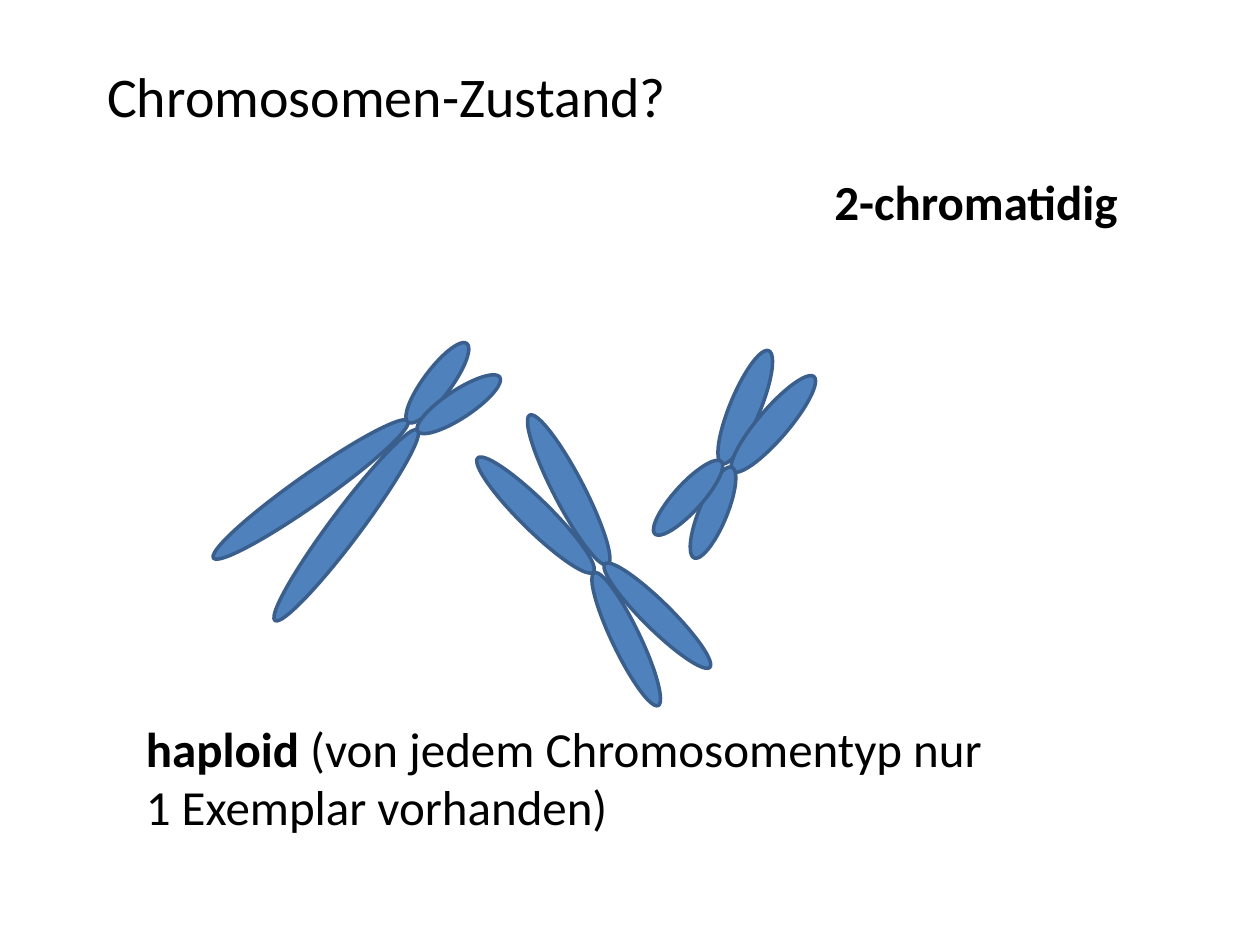
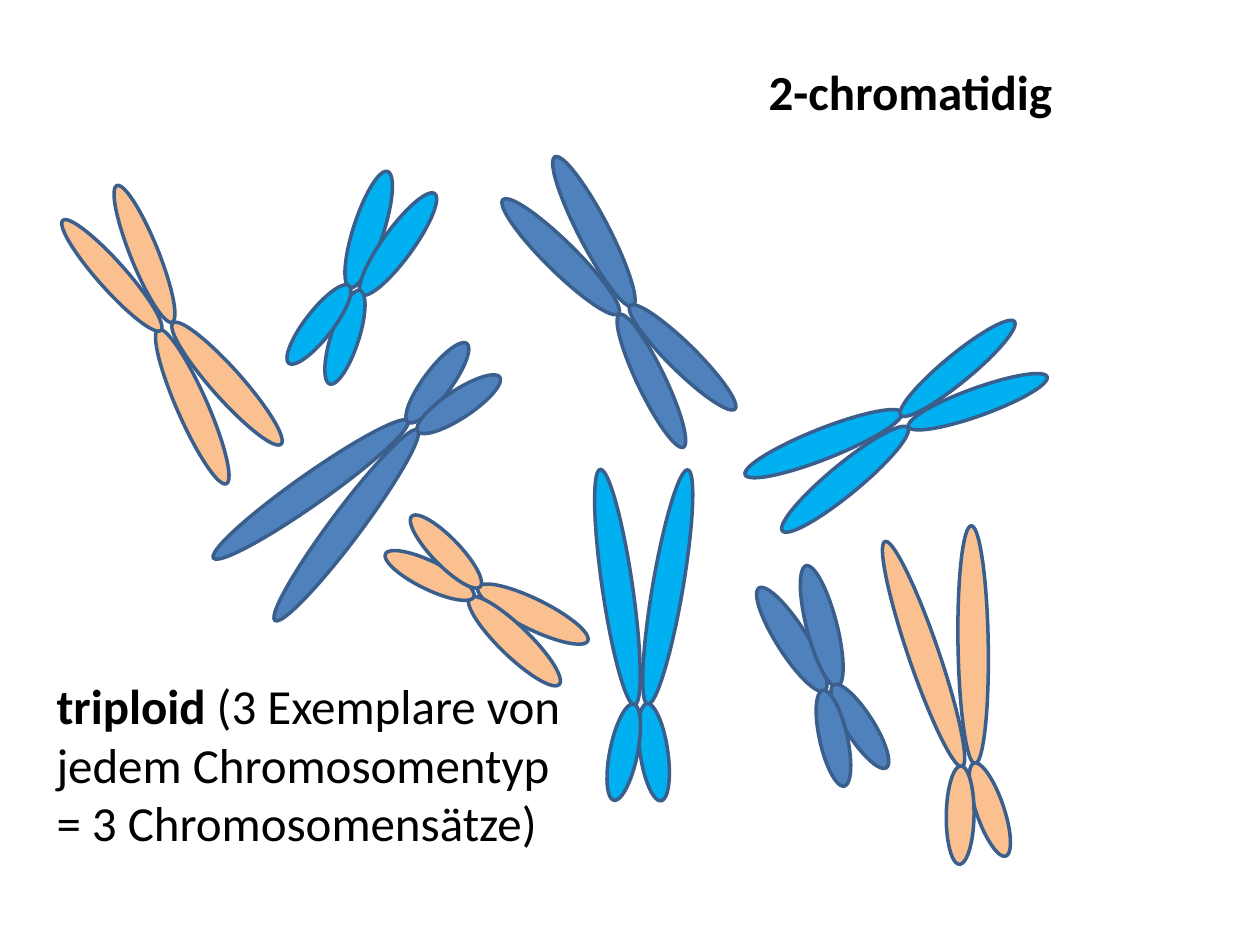
from dataclasses import dataclass
from math import cos, radians, sin

from pptx import Presentation
from pptx.dml.color import RGBColor as Rgb
from pptx.enum.shapes import MSO_SHAPE as Shape
from pptx.enum.text import MSO_ANCHOR as Anchor, PP_ALIGN as Align
from pptx.util import Inches, Pt


@dataclass(frozen=True)
class Theme:
    font: str = "Calibri"
    text: str = "000000"
    outline: str = "3A5F8C"
    outline_width: float = 2
    title_size: int = 32
    body_size: int = 28
    blue: str = "4F81BD"
    cyan: str = "00B0F0"
    orange: str = "FAC090"


THEME = Theme()
WIDTH, HEIGHT = 10, 7.5
TITLE_ONLY, BLANK = 5, 6

# Upright chromosome types; each arm: offset x, y from the centromere, width, length, turn
CHROMOSOMES = {
    "large": [(-0.19, -0.94, 0.24, 1.89, -8.3), (0.21, -0.94, 0.24, 1.89, 9.7),
              (0.10, 0.37, 0.22, 0.78, -8.3), (-0.14, 0.37, 0.22, 0.78, 11.5)],
    "medium": [(-0.16, -0.65, 0.24, 1.29, -8.3), (0.17, -0.65, 0.24, 1.34, 9.6),
               (0.13, 0.57, 0.22, 1.17, -8.3), (-0.18, 0.57, 0.22, 1.17, 11.4)],
    "small": [(-0.13, -0.48, 0.24, 0.97, -8.3), (0.13, -0.48, 0.24, 0.99, 9.7),
              (0.08, 0.37, 0.22, 0.78, -8.3), (-0.15, 0.37, 0.22, 0.78, 11.5)],
}

# Per slide: chromosomes as (type, colour, centromere x, y, angle),
# texts as (box, alignment, paragraphs of (wording, bold) runs)
SLIDES = [
    {
        "title": ("Chromosomen-Zustand?", (0.75, 0.44, 8.27, 0.64)),
        "chromosomes": [
            ("large", THEME.blue, 3.28, 3.37, 225.1),
            ("small", THEME.blue, 5.78, 3.71, 30.9),
            ("medium", THEME.blue, 4.77, 4.51, 322.9),
        ],
        "texts": [
            ((6.05, 1.31, 3.39, 0.57), Align.CENTER, [[("2-chromatidig", True)]]),
            ((1.06, 5.65, 7.4, 1.04), Align.LEFT, [
                [("haploid", True), (" (von jedem Chromosomentyp nur", False)],
                [("1 Exemplar vorhanden)", False)],
            ]),
        ],
    },
    {
        "title": None,
        "chromosomes": [
            ("large", THEME.blue, 3.28, 3.37, 225.1),
            ("large", THEME.cyan, 5.09, 5.6, 0),
            ("small", THEME.blue, 6.6, 5.46, 335.8),
            ("small", THEME.cyan, 2.83, 2.31, 26.3),
            ("medium", THEME.blue, 4.97, 2.46, 322.9),
            ("medium", THEME.cyan, 7.18, 3.33, 238.8),
            ("large", THEME.orange, 7.69, 6.08, 349.4),
            ("small", THEME.orange, 3.76, 4.71, 124.4),
            ("medium", THEME.orange, 1.31, 2.59, 146.6),
        ],
        "texts": [
            ((5.35, 0.44, 3.75, 1.04), Align.CENTER, [[("2-chromatidig", True)]]),
            ((0.35, 5.31, 4.71, 1.51), Align.LEFT, [
                [("triploid", True),
                 (" (3 Exemplare von jedem Chromosomentyp", False)],
                [("= 3 Chromosomensätze)", False)],
            ]),
        ],
    },
]


def style_run(run, size, bold=False):
    run.font.name = THEME.font
    run.font.size = Pt(size)
    run.font.bold = bold
    run.font.color.rgb = Rgb.from_string(THEME.text)


def add_title(slide, wording, box):
    title = slide.shapes.title
    title.left, title.top, title.width, title.height = map(Inches, box)
    frame = title.text_frame
    frame.text = wording
    frame.vertical_anchor = Anchor.TOP
    heading = frame.paragraphs[0]
    heading.alignment = Align.LEFT
    style_run(heading.runs[0], THEME.title_size)


def add_text(slide, box, alignment, paragraphs):
    frame = slide.shapes.add_textbox(*map(Inches, box)).text_frame
    frame.word_wrap = True
    for index, runs in enumerate(paragraphs):
        paragraph = frame.add_paragraph() if index else frame.paragraphs[0]
        paragraph.alignment = alignment
        for wording, bold in runs:
            run = paragraph.add_run()
            run.text = wording
            style_run(run, THEME.body_size, bold)


def add_chromosome(slide, kind, colour, x, y, angle):
    """Turn all arms of one chromosome about its centromere."""
    group = slide.shapes.add_group_shape()
    c, s = cos(radians(angle)), sin(radians(angle))
    for dx, dy, width, length, turn in CHROMOSOMES[kind]:
        left = x + dx * c - dy * s - width / 2
        top = y + dx * s + dy * c - length / 2
        arm = group.shapes.add_shape(
            Shape.OVAL, *map(Inches, (left, top, width, length)))
        arm.rotation = (angle + turn) % 360
        arm.shadow.inherit = False
        arm.fill.solid()
        arm.fill.fore_color.rgb = Rgb.from_string(colour)
        arm.line.color.rgb = Rgb.from_string(THEME.outline)
        arm.line.width = Pt(THEME.outline_width)


def main():
    deck = Presentation()
    deck.slide_width, deck.slide_height = Inches(WIDTH), Inches(HEIGHT)
    for content in SLIDES:
        layout = TITLE_ONLY if content["title"] else BLANK
        slide = deck.slides.add_slide(deck.slide_layouts[layout])
        for chromosome in content["chromosomes"]:
            add_chromosome(slide, *chromosome)
        if content["title"]:
            add_title(slide, *content["title"])
        for text in content["texts"]:
            add_text(slide, *text)
    deck.save("out.pptx")


if __name__ == "__main__":
    main()
